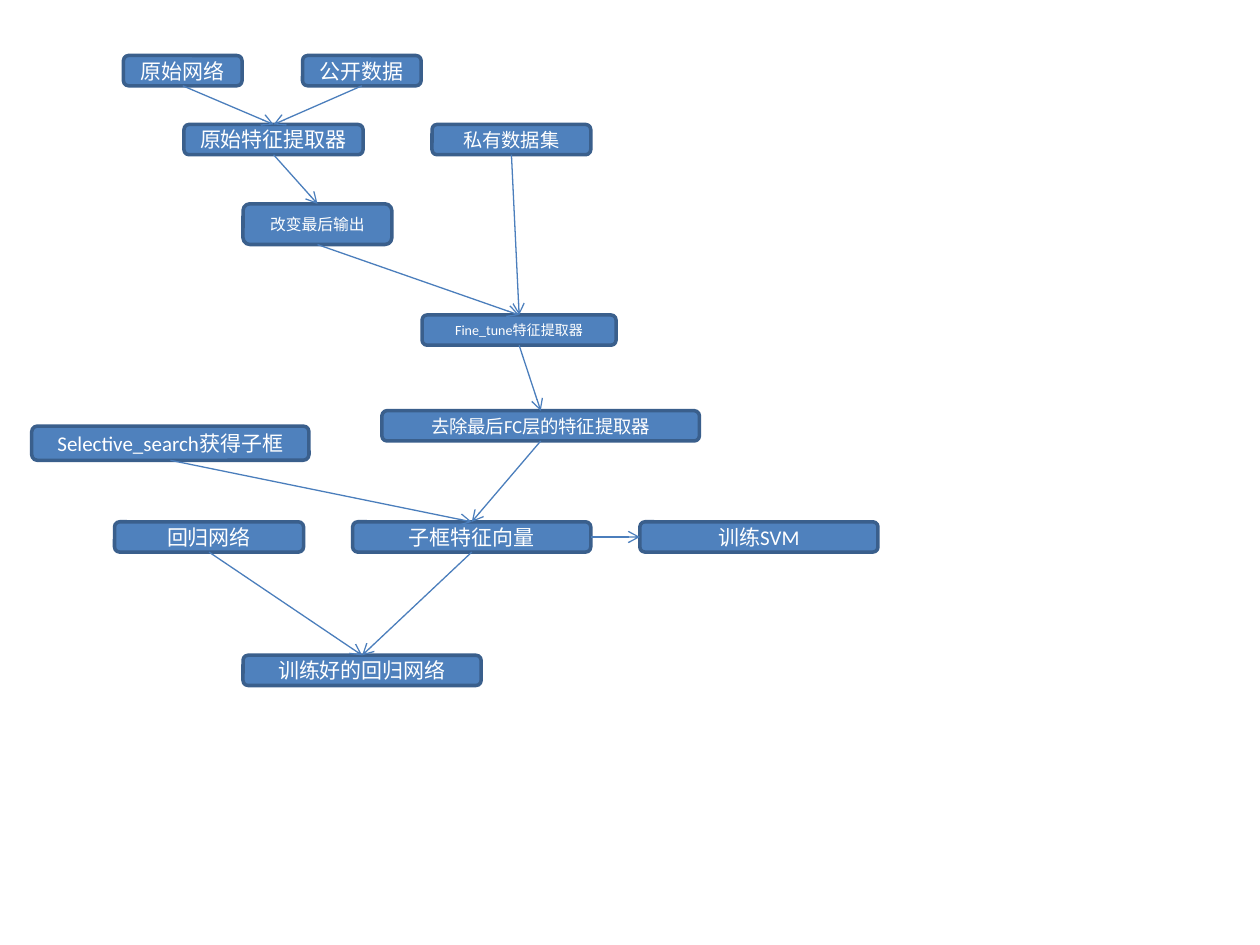
from lxml.etree import SubElement
from pptx import Presentation
from pptx.dml.color import RGBColor
from pptx.enum.shapes import MSO_CONNECTOR as Connector, MSO_SHAPE as Shape
from pptx.enum.text import MSO_ANCHOR as Anchor, PP_ALIGN as Align
from pptx.oxml.ns import qn
from pptx.util import Cm, Pt

COLORS = {"fill": "4F81BD", "border": "3A5F8C", "arrow": "4B7EBC", "text": "FFFFFF"}
TOP, LEFT, BOTTOM, RIGHT = range(4)  # connection sites of a rounded rectangle


class FlowChart:
    font = "Calibri"
    box_height = 0.61

    def __init__(self, slide):
        self.slide = slide

    def color(self, name):
        return RGBColor.from_string(COLORS[name])

    def box(self, text, left, top, width, size=12, height=box_height):
        box = self.slide.shapes.add_shape(
            Shape.ROUNDED_RECTANGLE, Cm(left), Cm(top), Cm(width), Cm(height))
        box.shadow.inherit = False
        box.fill.solid()
        box.fill.fore_color.rgb = self.color("fill")
        box.line.color.rgb = self.color("border")
        box.line.width = Pt(2)
        frame = box.text_frame
        frame.word_wrap = True
        frame.vertical_anchor = Anchor.MIDDLE
        frame.margin_top = frame.margin_bottom = 0
        para = frame.paragraphs[0]
        para.text = text
        para.alignment = Align.CENTER
        para.font.name = self.font
        para.font.size = Pt(size)
        para.font.color.rgb = self.color("text")
        return box

    def arrow(self, source, target, start=BOTTOM, end=TOP):
        arrow = self.slide.shapes.add_connector(Connector.STRAIGHT, 0, 0, 0, 0)
        arrow.begin_connect(source, start)
        arrow.end_connect(target, end)
        arrow.line.color.rgb = self.color("arrow")
        arrow.line.width = Pt(0.75)
        SubElement(arrow.line._get_or_add_ln(), qn("a:tailEnd"), type="arrow")
        SubElement(arrow._element.spPr, qn("a:effectLst"))


def main():
    deck = Presentation()
    deck.slide_width, deck.slide_height = Cm(25.4), Cm(19.05)
    chart = FlowChart(deck.slides.add_slide(deck.slide_layouts[6]))

    # Pre-training
    base_network = chart.box("原始网络", 2.49, 1.12, 2.39)
    public_data = chart.box("公开数据", 6.1, 1.12, 2.39)
    base_extractor = chart.box("原始特征提取器", 3.71, 2.51, 3.61)

    # Fine-tuning
    private_data = chart.box("私有数据集", 8.71, 2.51, 3.2, size=11)
    new_output = chart.box("改变最后输出", 4.9, 4.11, 3, size=9, height=0.82)
    tuned_extractor = chart.box("Fine_tune特征提取器", 8.51, 6.35, 3.91, size=8)
    cut_extractor = chart.box("去除最后FC层的特征提取器", 7.7, 8.28, 6.4, size=10.5)

    # Region features, classifier and regression
    regions = chart.box("Selective_search获得子框", 0.64, 8.59, 5.59, height=0.69)
    regressor = chart.box("回归网络", 2.31, 10.52, 3.81)
    vectors = chart.box("子框特征向量", 7.11, 10.52, 4.8)
    classifier = chart.box("训练SVM", 12.9, 10.52, 4.8)
    trained_regressor = chart.box("训练好的回归网络", 4.9, 13.21, 4.8)

    # Flow
    for source, target in (
        (base_network, base_extractor),
        (public_data, base_extractor),
        (base_extractor, new_output),
        (new_output, tuned_extractor),
        (private_data, tuned_extractor),
        (tuned_extractor, cut_extractor),
        (cut_extractor, vectors),
        (regions, vectors),
        (regressor, trained_regressor),
        (vectors, trained_regressor),
    ):
        chart.arrow(source, target)
    chart.arrow(vectors, classifier, start=RIGHT, end=LEFT)

    deck.save("out.pptx")


if __name__ == "__main__":
    main()
